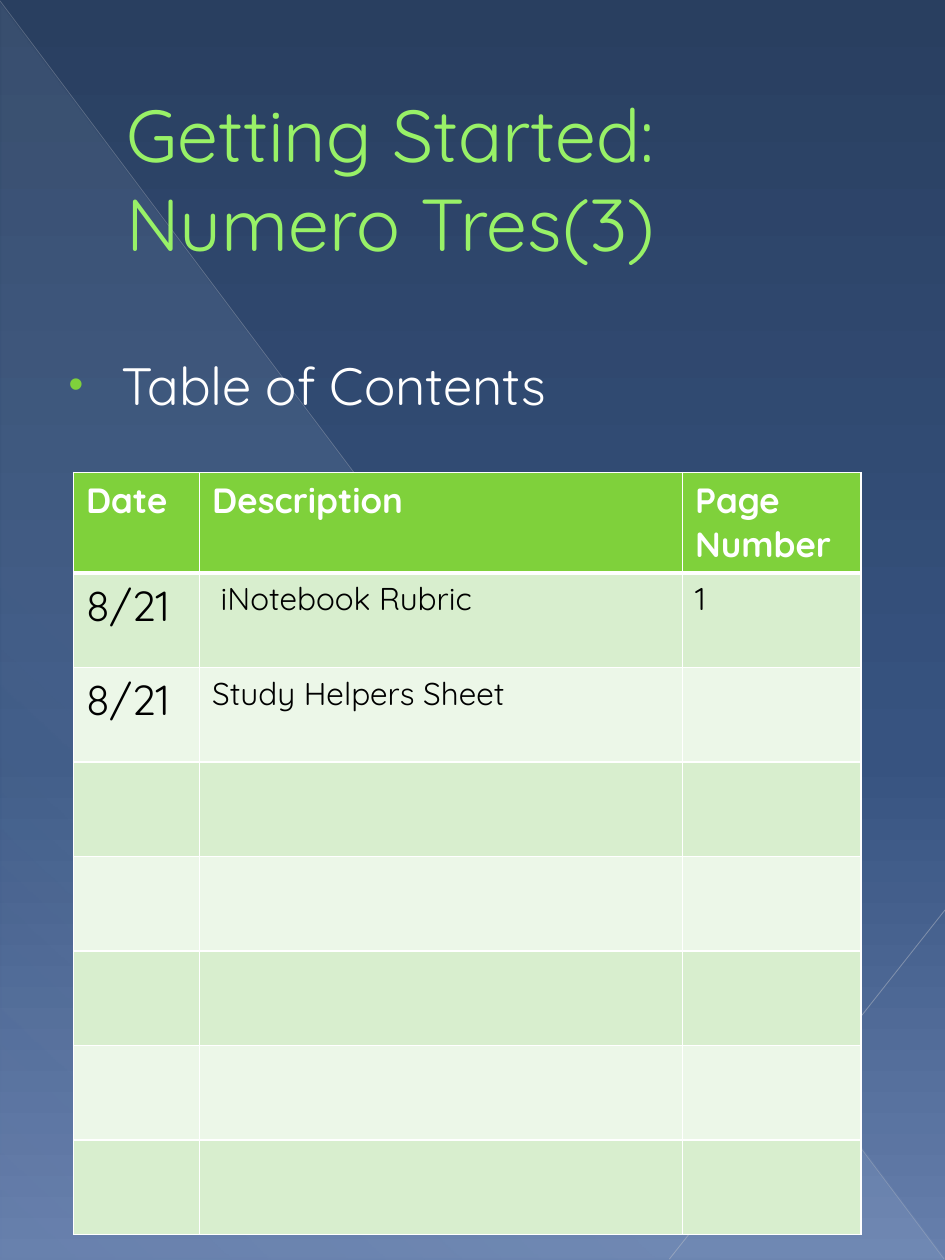
from lxml.etree import SubElement
from pptx import Presentation
from pptx.dml.color import RGBColor
from pptx.enum.shapes import MSO_CONNECTOR, MSO_SHAPE
from pptx.enum.text import MSO_ANCHOR, MSO_AUTO_SIZE, PP_ALIGN
from pptx.oxml import parse_xml
from pptx.oxml.ns import nsdecls, qn
from pptx.util import Pt

FONT = "Quicksand"
color = RGBColor.from_string


def set_gradient(solid_fill, stops, angle):
    """Replace a solid fill by a linear gradient of (position, colour, opacity)."""
    stop_xml = "".join(
        f'<a:gs pos="{position * 1000}"><a:srgbClr val="{shade}">'
        f'<a:alpha val="{opacity * 1000}"/></a:srgbClr></a:gs>'
        for position, shade, opacity in stops)
    gradient = parse_xml(
        f'<a:gradFill {nsdecls("a")} rotWithShape="1"><a:gsLst>{stop_xml}</a:gsLst>'
        f'<a:lin ang="{angle * 60000}" scaled="0"/></a:gradFill>')
    solid_fill.getparent().replace(solid_fill, gradient)


def format_text(paragraph, size, shade, bold=False):
    for run in paragraph.runs:
        run.font.name = FONT
        run.font.size = Pt(size)
        run.font.bold = bold
        run.font.color.rgb = color(shade)


presentation = Presentation()
presentation.slide_width, presentation.slide_height = Pt(540), Pt(720)
slide = presentation.slides.add_slide(presentation.slide_layouts[1])

# Background
slide.background.fill.solid()
set_gradient(slide.element.xpath(".//p:bgPr/a:solidFill")[0],
             [(0, "293F60", 100), (60, "375380", 100), (100, "667FAC", 100)], 90)

# Pale triangle and thin diagonals, behind the placeholders
triangle = slide.shapes.add_shape(MSO_SHAPE.RIGHT_TRIANGLE, Pt(0.5), Pt(1.5), Pt(539.5), Pt(718))
triangle.shadow.inherit = False
triangle.line.fill.background()
triangle.fill.solid()
set_gradient(triangle.element.xpath("./p:spPr/a:solidFill")[0],
             [(0, "D6ECFF", 10), (70, "D6ECFF", 8), (100, "D6ECFF", 1)], 133)
backdrop = [triangle]

diagonals = [
    ((0, 0.5, 539.5, 719.5), "B7BCC5", 0.39, 35),
    ((540, 520, 382.5, 719.5), "BFC3CB", 0.47, 45),
]
for ends, shade, width, opacity in diagonals:
    diagonal = slide.shapes.add_connector(MSO_CONNECTOR.STRAIGHT, *map(Pt, ends))
    diagonal.line.width = Pt(width)
    diagonal.line.color.rgb = color(shade)
    line_color = diagonal.element.xpath(".//a:ln//a:srgbClr")[0]
    SubElement(line_color, qn("a:alpha"), val=str(opacity * 1000))
    SubElement(diagonal.element.spPr, qn("a:effectLst"))
    backdrop.append(diagonal)

tree = triangle.element.getparent()
for depth, part in enumerate(backdrop, start=2):
    tree.insert(depth, part.element)

# Title
title = slide.shapes.title
title.left, title.top, title.width, title.height = Pt(27), Pt(28), Pt(486), Pt(147)
title.text_frame.text = "Getting Started:\vNumero Tres(3)"
title.text_frame.auto_size = MSO_AUTO_SIZE.NONE
title.text_frame.vertical_anchor = MSO_ANCHOR.MIDDLE
heading = title.text_frame.paragraphs[0]
heading.alignment = PP_ALIGN.LEFT
heading._p.get_or_add_pPr().set("marL", str(Pt(38)))
format_text(heading, 42, "98F167")
for run in heading.runs:
    run.font._element.insert(0, parse_xml(
        f'<a:ln {nsdecls("a")} w="{Pt(0.5)}"><a:solidFill>'
        '<a:srgbClr val="589129"/></a:solidFill></a:ln>'))

# Bulleted line
contents = slide.placeholders[1]
contents.left, contents.top, contents.width, contents.height = Pt(27), Pt(198), Pt(486), Pt(480)
contents.text_frame.text = "Table of Contents"
contents.text_frame.auto_size = MSO_AUTO_SIZE.NONE
contents.text_frame.vertical_anchor = MSO_ANCHOR.TOP
entry = contents.text_frame.paragraphs[0]
entry.space_before = Pt(0)
format_text(entry, 30, "FFFFFF")
entry_format = entry._p.get_or_add_pPr()
entry_format.set("marL", str(Pt(35)))
entry_format.set("indent", str(Pt(-30)))
bullet_color = SubElement(entry_format, qn("a:buClr"))
SubElement(bullet_color, qn("a:srgbClr"), val="7FD13B")
SubElement(entry_format, qn("a:buSzPct"), val="80000")
SubElement(entry_format, qn("a:buFont"), typeface="Arial")
SubElement(entry_format, qn("a:buChar"), char="•")

# Table of contents: a header, two entries and five empty rows
rows = [
    ("Date", "Description", "Page Number"),
    ("8/21", " iNotebook Rubric", "1"),
    ("8/21", "Study Helpers Sheet", ""),
] + [("", "", "")] * 5
column_widths = [72, 276, 102]
row_height = 54
table = slide.shapes.add_table(len(rows), len(column_widths), Pt(42), Pt(270),
                               Pt(sum(column_widths)), Pt(row_height * len(rows))).table
for column, width in zip(table.columns, column_widths):
    column.width = Pt(width)

for row_index, row in enumerate(rows):
    table.rows[row_index].height = Pt(row_height)
    is_header = row_index == 0
    band = "7FD13B" if is_header else ("ECF7E8", "D8EECE")[row_index % 2]
    for column_index, text in enumerate(row):
        cell = table.cell(row_index, column_index)
        cell.text_frame.text = text
        if is_header:
            format_text(cell.text_frame.paragraphs[0], 20, "FFFFFF", bold=True)
        else:
            size = 24 if column_index == 0 else 18
            format_text(cell.text_frame.paragraphs[0], size, "000000")
        cell.fill.solid()
        cell.fill.fore_color.rgb = color(band)

        # White borders, thicker between the header and the entries
        for position, side in enumerate(("lnL", "lnR", "lnT", "lnB")):
            under_header = (row_index, side) in ((0, "lnB"), (1, "lnT"))
            border = parse_xml(
                f'<a:{side} {nsdecls("a")} w="{Pt(3 if under_header else 1)}"><a:solidFill>'
                f'<a:srgbClr val="FFFFFF"/></a:solidFill></a:{side}>')
            cell._tc.get_or_add_tcPr().insert(position, border)

presentation.save("out.pptx")
